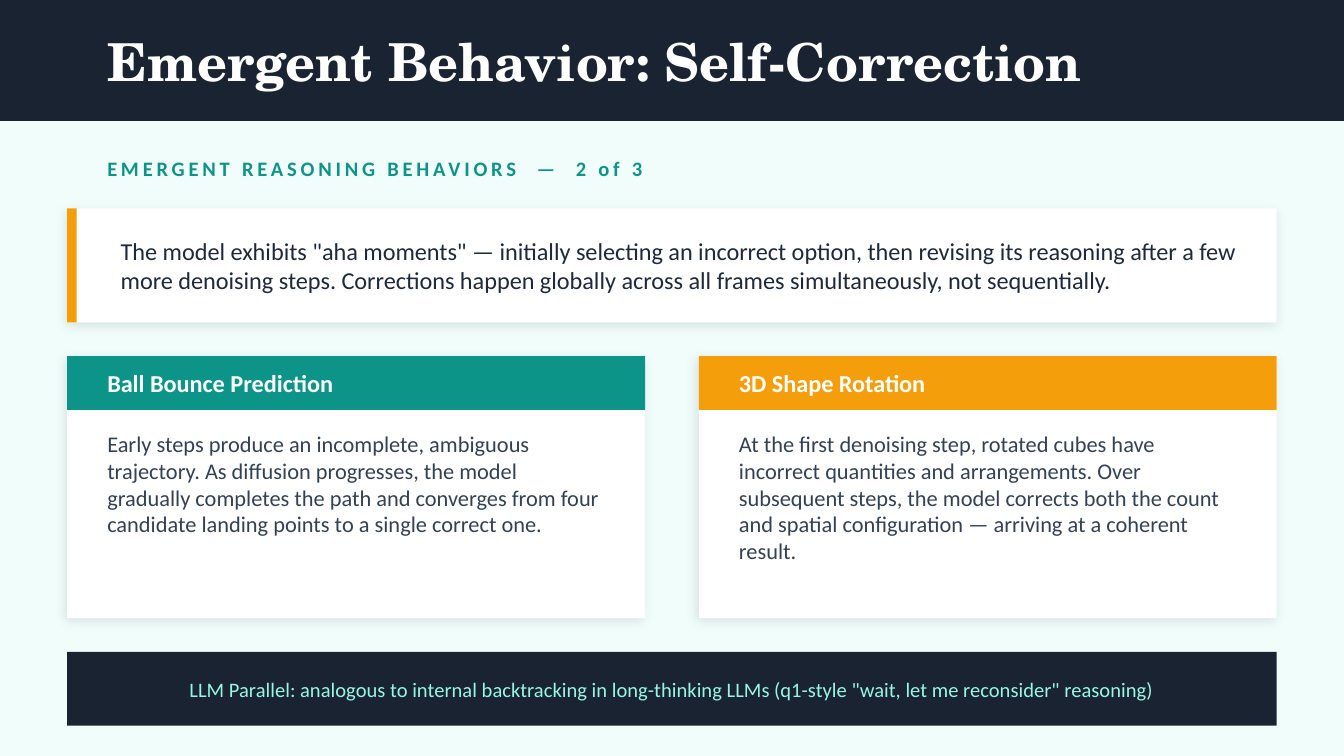
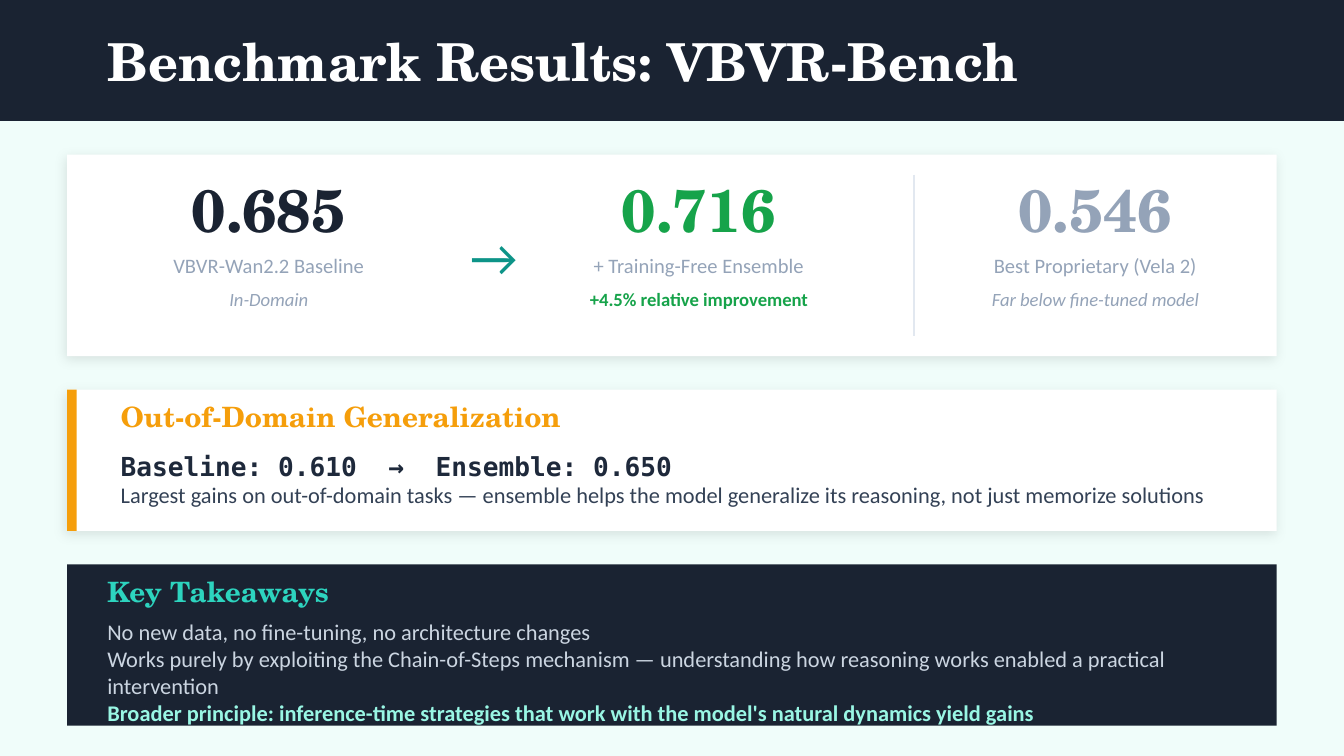
import lxml.etree
import pptx
import pptx.dml.color
import pptx.enum.shapes
import pptx.enum.text
import pptx.oxml
import pptx.oxml.ns
import pptx.util

Inches = pptx.util.Inches
ALIGN = pptx.enum.text.PP_ALIGN
ANCHOR = pptx.enum.text.MSO_ANCHOR

NAVY, MINT, WHITE = "1A2332", "F0FDFA", "FFFFFF"
TEAL, AMBER, GREEN = "0D9488", "F59E0B", "16A34A"
INK, SLATE, GREY, RULE = "1E293B", "334155", "94A3B8", "E2E8F0"
AQUA, TURQUOISE, SILVER = "99F6E4", "2DD4BF", "CBD5E1"
SERIF, SANS, MONO = "TeX Gyre Schola", "Calibri", "DejaVu Sans Mono"

SLIDE_WIDTH = 10
SLIDE_HEIGHT = SLIDE_WIDTH * 9 / 16
LEFT, WIDTH = 0.5, 9
INDENT = 0.2
TEXT_LEFT, TEXT_WIDTH = LEFT + INDENT, WIDTH - 2 * INDENT
ACCENT_WIDTH = 0.07
ACCENT_TEXT_LEFT = 0.8

CORRECTION = {
    "title": "Emergent Behavior: Self-Correction",
    "section": "EMERGENT REASONING BEHAVIORS  —  2 of 3",
    "summary": 'The model exhibits "aha moments" — initially selecting an incorrect option, '
               "then revising its reasoning after a few more denoising steps. Corrections "
               "happen globally across all frames simultaneously, not sequentially.",
    "examples": [
        ("Ball Bounce Prediction", TEAL,
         "Early steps produce an incomplete, ambiguous trajectory. As diffusion progresses, "
         "the model gradually completes the path and converges from four candidate landing "
         "points to a single correct one."),
        ("3D Shape Rotation", AMBER,
         "At the first denoising step, rotated cubes have incorrect quantities and "
         "arrangements. Over subsequent steps, the model corrects both the count and spatial "
         "configuration — arriving at a coherent result."),
    ],
    "parallel": "LLM Parallel: analogous to internal backtracking in long-thinking LLMs "
                '(q1-style "wait, let me reconsider" reasoning)',
}

BENCHMARK = {
    "title": "Benchmark Results: VBVR-Bench",
    # left, width, score, score colour, label, note, note format
    "scores": [
        (0.6, 2.8, "0.685", NAVY, "VBVR-Wan2.2 Baseline",
         "In-Domain", {"color": GREY, "italic": True}),
        (3.8, 2.8, "0.716", GREEN, "+ Training-Free Ensemble",
         "+4.5% relative improvement", {"color": GREEN, "bold": True}),
        (7, 2.3, "0.546", GREY, "Best Proprietary (Vela 2)",
         "Far below fine-tuned model", {"color": GREY, "italic": True}),
    ],
    "generalization": "Out-of-Domain Generalization",
    "gain": "Baseline: 0.610  →  Ensemble: 0.650",
    "gain_note": "Largest gains on out-of-domain tasks — ensemble helps the model generalize "
                 "its reasoning, not just memorize solutions",
    "takeaways_heading": "Key Takeaways",
    "takeaways": [
        "No new data, no fine-tuning, no architecture changes",
        "Works purely by exploiting the Chain-of-Steps mechanism — understanding how "
        "reasoning works enabled a practical intervention",
    ],
    "principle": "Broader principle: inference-time strategies that work with the model's "
                 "natural dynamics yield gains",
}


def rgb(color):
    return pptx.dml.color.RGBColor.from_string(color)


def styled(text, size, color, font=SANS, bold=False, italic=False, spacing=0):
    """Describe one single-run paragraph."""
    return {"text": text, "size": size, "color": color, "font": font,
            "bold": bold, "italic": italic, "spacing": spacing}


def write(shape, paragraphs, align=ALIGN.LEFT, anchor=ANCHOR.MIDDLE):
    frame = shape.text_frame
    frame.word_wrap = True
    frame.auto_size = pptx.enum.text.MSO_AUTO_SIZE.NONE
    frame.vertical_anchor = anchor
    for index, content in enumerate(paragraphs):
        paragraph = frame.paragraphs[0] if index == 0 else frame.add_paragraph()
        paragraph.alignment = align
        run = paragraph.add_run()
        run.text = content["text"]
        run.font.name = content["font"]
        run.font.size = pptx.util.Pt(content["size"])
        run.font.bold = content["bold"]
        run.font.italic = content["italic"]
        run.font.color.rgb = rgb(content["color"])
        if content["spacing"]:
            run.font._element.set("spc", str(content["spacing"] * 100))


def add_text(slide, box, *paragraphs, **layout):
    write(slide.shapes.add_textbox(*map(Inches, box)), paragraphs, **layout)


def add_block(slide, box, color):
    block = slide.shapes.add_shape(
        pptx.enum.shapes.MSO_SHAPE.RECTANGLE, *map(Inches, box))
    block.shadow.inherit = False
    block.fill.solid()
    block.fill.fore_color.rgb = rgb(color)
    block.line.fill.background()
    return block


def add_card(slide, box, accent=None):
    """Add a white card with a soft shadow and, if asked, a coloured left edge."""
    card = add_block(slide, box, WHITE)
    effects = card.element.spPr.find(pptx.oxml.ns.qn("a:effectLst"))
    effects.append(pptx.oxml.parse_xml(
        f'<a:outerShdw {pptx.oxml.ns.nsdecls("a")} blurRad="{pptx.util.Pt(6)}" '
        f'dist="{pptx.util.Pt(2)}" dir="{135 * 60000}" algn="bl" rotWithShape="0">'
        '<a:srgbClr val="000000"><a:alpha val="10000"/></a:srgbClr></a:outerShdw>'))
    if accent:
        left, top, _, height = box
        add_block(slide, (left, top, ACCENT_WIDTH, height), accent)


def add_rule(slide, x, top, bottom):
    rule = slide.shapes.add_connector(
        pptx.enum.shapes.MSO_CONNECTOR.STRAIGHT, *map(Inches, (x, top, x, bottom)))
    rule.line.color.rgb = rgb(RULE)
    rule.line.width = pptx.util.Pt(1)
    lxml.etree.SubElement(rule.element.spPr, pptx.oxml.ns.qn("a:effectLst"))


def add_titled_slide(presentation, text):
    slide = presentation.slides.add_slide(presentation.slide_layouts[5])
    slide.background.fill.solid()
    slide.background.fill.fore_color.rgb = rgb(MINT)
    title = slide.shapes.title
    title.left, title.top, title.width, title.height = map(
        Inches, (TEXT_LEFT, 0.1, TEXT_WIDTH, 0.7))
    write(title, [styled(text, 28, WHITE, SERIF, bold=True)])
    band = add_block(slide, (0, 0, SLIDE_WIDTH, 0.9), NAVY)
    title.element.addprevious(band.element)
    return slide


def build_correction(presentation):
    slide = add_titled_slide(presentation, CORRECTION["title"])
    add_text(slide, (TEXT_LEFT, 1.1, TEXT_WIDTH, 0.3),
             styled(CORRECTION["section"], 11, TEAL, bold=True, spacing=2))

    add_card(slide, (LEFT, 1.55, WIDTH, 0.85), AMBER)
    add_text(slide, (ACCENT_TEXT_LEFT, 1.6, 8.5, 0.75),
             styled(CORRECTION["summary"], 13, INK))

    top, card_width, gap = 2.65, 4.3, 0.4
    for index, (heading, color, body) in enumerate(CORRECTION["examples"]):
        left = LEFT + index * (card_width + gap)
        text_left, text_width = left + INDENT, card_width - 2 * INDENT
        add_card(slide, (left, top, card_width, 1.95))
        add_block(slide, (left, top, card_width, 0.4), color)
        add_text(slide, (text_left, top + 0.02, text_width, 0.36),
                 styled(heading, 13, WHITE, bold=True))
        add_text(slide, (text_left, top + 0.5, text_width, 1.3),
                 styled(body, 12, SLATE), anchor=ANCHOR.TOP)

    add_block(slide, (LEFT, 4.85, WIDTH, 0.55), NAVY)
    add_text(slide, (TEXT_LEFT, 4.85, TEXT_WIDTH, 0.55),
             styled(CORRECTION["parallel"], 11, AQUA), align=ALIGN.CENTER)


def build_benchmark(presentation):
    slide = add_titled_slide(presentation, BENCHMARK["title"])

    add_card(slide, (LEFT, 1.15, WIDTH, 1.5))
    for left, width, score, color, label, note, note_format in BENCHMARK["scores"]:
        rows = [
            (1.25, 0.6, styled(score, 32, color, SERIF, bold=True)),
            (1.85, 0.25, styled(label, 11, GREY)),
            (2.1, 0.25, styled(note, 10, **note_format)),
        ]
        for top, height, content in rows:
            add_text(slide, (left, top, width, height), content, align=ALIGN.CENTER)
    add_text(slide, (3.4, 1.15, 0.5, 1.5), styled("→", 28, TEAL), align=ALIGN.CENTER)
    add_rule(slide, 6.8, 1.3, 2.5)

    add_card(slide, (LEFT, 2.9, WIDTH, 1.05), AMBER)
    add_text(slide, (ACCENT_TEXT_LEFT, 2.95, 4, 0.3),
             styled(BENCHMARK["generalization"], 15, AMBER, SERIF, bold=True))
    add_text(slide, (ACCENT_TEXT_LEFT, 3.3, 8.4, 0.55),
             styled(BENCHMARK["gain"], 14, INK, MONO, bold=True),
             styled(BENCHMARK["gain_note"], 12, SLATE), anchor=ANCHOR.TOP)

    add_block(slide, (LEFT, 4.2, WIDTH, 1.2), NAVY)
    add_text(slide, (TEXT_LEFT, 4.25, TEXT_WIDTH, 0.3),
             styled(BENCHMARK["takeaways_heading"], 15, TURQUOISE, SERIF, bold=True))
    add_text(slide, (TEXT_LEFT, 4.55, TEXT_WIDTH, 0.8),
             *[styled(text, 12, SILVER) for text in BENCHMARK["takeaways"]],
             styled(BENCHMARK["principle"], 12, AQUA, bold=True), anchor=ANCHOR.TOP)


def main():
    presentation = pptx.Presentation()
    presentation.slide_width = Inches(SLIDE_WIDTH)
    presentation.slide_height = Inches(SLIDE_HEIGHT)
    build_correction(presentation)
    build_benchmark(presentation)
    presentation.save("out.pptx")


if __name__ == "__main__":
    main()
